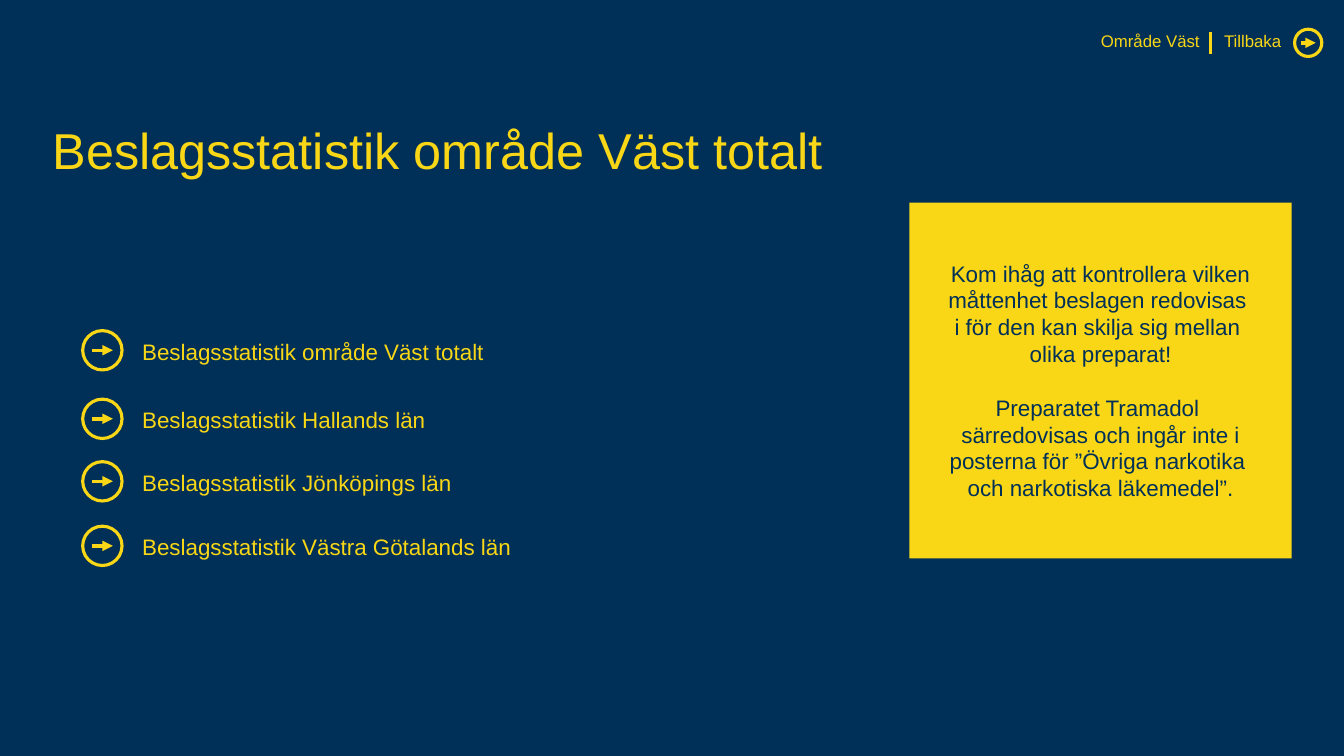
from copy import deepcopy
from dataclasses import dataclass

from lxml.etree import SubElement
from pptx import Presentation
from pptx.dml.color import RGBColor as RGB
from pptx.enum.shapes import MSO_CONNECTOR as CONN, MSO_SHAPE as SHAPE
from pptx.enum.text import MSO_ANCHOR as ANCHOR, PP_ALIGN as ALIGN
from pptx.oxml.ns import qn
from pptx.util import Inches, Pt


@dataclass(frozen=True)
class Theme:
    navy: RGB = RGB(0x00, 0x30, 0x57)
    yellow: RGB = RGB(0xF9, 0xD6, 0x16)
    font: str = "Arial"
    title: float = 36
    body: float = 16
    nav: float = 12
    ring: float = 2.25
    arrow: float = 2.5


class SlideBuilder:
    def __init__(self, slide, theme):
        self.theme = theme
        self.slide = slide
        self.shapes = slide.shapes
        slide.background.fill.solid()
        slide.background.fill.fore_color.rgb = theme.navy

    def start_group(self):
        """Send the following elements to a new group."""
        self.shapes = self.slide.shapes.add_group_shape().shapes

    def end_group(self):
        self.shapes = self.slide.shapes

    def fill_text(self, sp, paragraphs, size, color, align=ALIGN.LEFT,
                  anchor=ANCHOR.TOP, margin=0, spacing=1.0, gap=0):
        """Fill a shape with paragraphs; a newline makes a line break."""
        tf = sp.text_frame
        frame = {"word_wrap": True, "vertical_anchor": anchor,
                 "margin_left": Inches(margin), "margin_right": Inches(margin),
                 "margin_top": 0, "margin_bottom": 0}
        for name, value in frame.items():
            setattr(tf, name, value)
        for i, text in enumerate(paragraphs):
            p = tf.add_paragraph() if i else tf.paragraphs[0]
            p.text = text
            p.alignment = align
            p.line_spacing = spacing
            p.space_before = Pt(gap if i else 0)
            for r in p.runs:
                fmt = {"name": self.theme.font, "size": Pt(size)}
                for name, value in fmt.items():
                    setattr(r.font, name, value)
                r.font.color.rgb = color
            for br in p._p.findall(qn("a:br")):
                br.append(deepcopy(p.runs[0]._r.rPr))

    def text(self, x, y, w, h, text, size, **style):
        sp = self.shapes.add_textbox(*map(Inches, (x, y, w, h)))
        self.fill_text(sp, [text], size, self.theme.yellow, **style)

    def line(self, x1, y1, x2, y2, width, arrow=False):
        sp = self.shapes.add_connector(
            CONN.STRAIGHT, *map(Inches, (x1, y1, x2, y2)))
        sp.line.color.rgb = self.theme.yellow
        sp.line.width = Pt(width)
        if arrow:
            ln = sp._element.spPr.find(qn("a:ln"))
            SubElement(ln, qn("a:tailEnd"), type="triangle")
        SubElement(sp._element.spPr, qn("a:effectLst"))

    def arrow_icon(self, x, y, size, length):
        """Draw a ring with a centred arrow pointing right."""
        cx, cy = x + size / 2, y + size / 2
        self.line(cx - length / 2, cy, cx + length / 2, cy,
                  self.theme.arrow, arrow=True)
        sp = self.shapes.add_shape(
            SHAPE.OVAL, *map(Inches, (x, y, size, size)))
        sp.shadow.inherit = False
        sp.fill.background()
        sp.line.color.rgb = self.theme.yellow
        sp.line.width = Pt(self.theme.ring)

    def note(self, x, y, w, h, paragraphs, **style):
        sp = self.shapes.add_shape(
            SHAPE.RECTANGLE, *map(Inches, (x, y, w, h)))
        sp.shadow.inherit = False
        sp.fill.solid()
        sp.fill.fore_color.rgb = self.theme.yellow
        sp.line.fill.background()
        self.fill_text(sp, paragraphs, self.theme.body, self.theme.navy, **style)


MENU = [
    (3.28, "Beslagsstatistik område Väst totalt"),
    (3.96, "Beslagsstatistik Hallands län"),
    (4.58, "Beslagsstatistik Jönköpings län"),
    (5.22, "Beslagsstatistik Västra Götalands län"),
]
REMINDER = [
    "Kom ihåg att kontrollera vilken måttenhet beslagen redovisas \n"
    "i för den kan skilja sig mellan \nolika preparat!",
    "Preparatet Tramadol \nsärredovisas och ingår inte i posterna för "
    "”Övriga narkotika \noch narkotiska läkemedel”.",
]


def main():
    prs = Presentation()
    prs.slide_width, prs.slide_height = Inches(13.33), Inches(7.5)
    theme = Theme()
    s = SlideBuilder(prs.slides.add_slide(prs.slide_layouts[6]), theme)

    s.text(0.52, 0.79, 12.28, 1.45, "Beslagsstatistik område Väst totalt",
           theme.title, anchor=ANCHOR.MIDDLE, spacing=0.9)

    s.start_group()
    s.text(7.26, 0.33, 4.64, 0.23, "Område Väst", theme.nav,
           align=ALIGN.RIGHT, spacing=0.9)
    s.line(12.01, 0.32, 12.01, 0.54, theme.ring)
    s.text(12.14, 0.33, 0.65, 0.19, "Tillbaka", theme.nav, spacing=0.9)
    s.arrow_icon(12.84, 0.29, 0.27, 0.15)

    for top, label in MENU:
        s.start_group()
        s.text(1.41, top + 0.07, 4.42, 0.3, label, theme.body)
        s.arrow_icon(0.82, top, 0.39, 0.21)
    s.end_group()

    s.note(9.02, 2.01, 3.79, 3.53, REMINDER, align=ALIGN.CENTER,
           anchor=ANCHOR.MIDDLE, margin=0.2, gap=19)
    prs.save("out.pptx")


if __name__ == "__main__":
    main()
